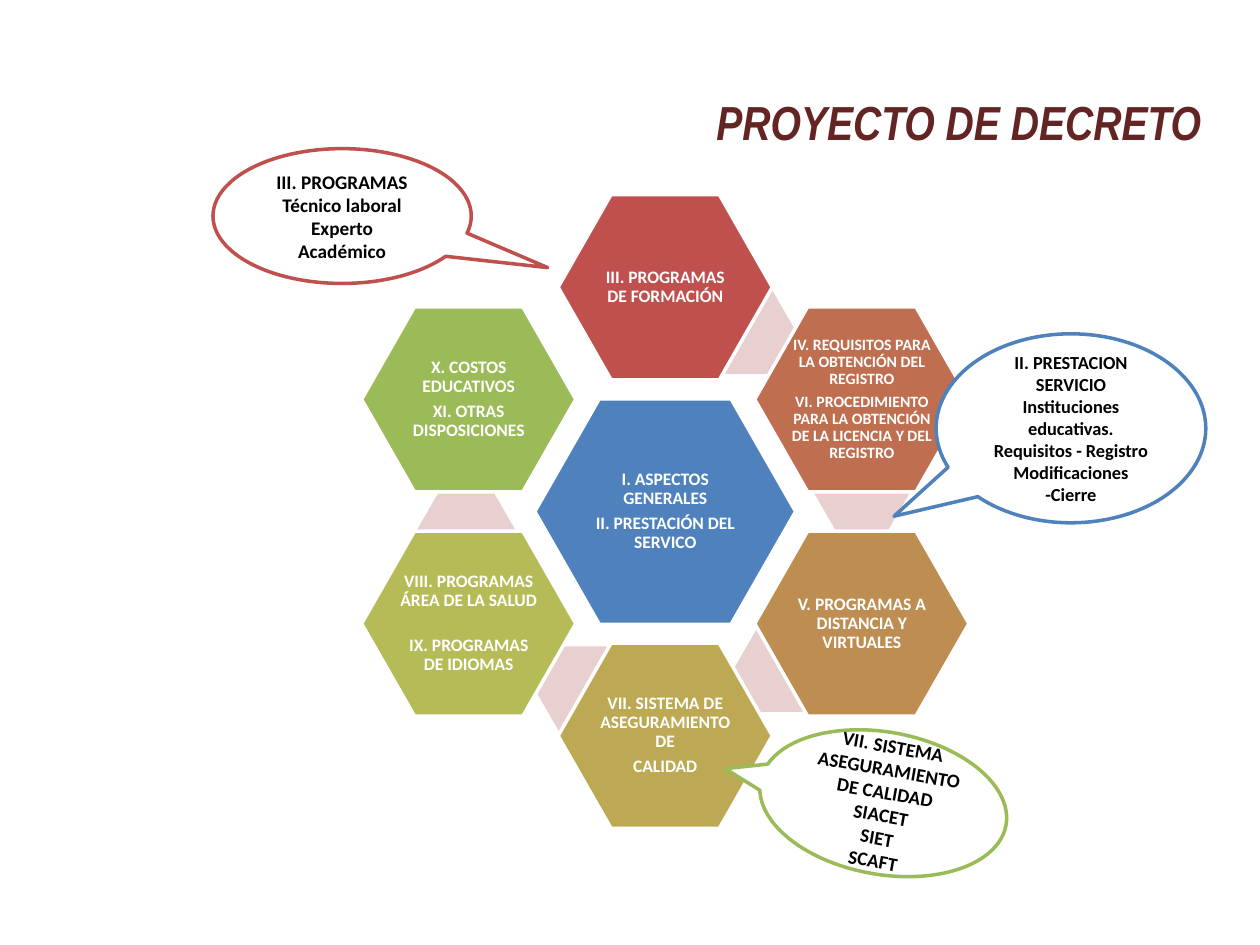
from dataclasses import dataclass

from pptx import Presentation
from pptx.dml.color import RGBColor
from pptx.enum.shapes import MSO_SHAPE
from pptx.enum.text import MSO_ANCHOR, PP_ALIGN
from pptx.util import Inches, Pt


@dataclass(frozen=True)
class Theme:
    white: str = "FFFFFF"
    ink: str = "000000"
    title: str = "632523"
    link: str = "E8D0D0"
    blue: str = "4F81BD"
    red: str = "C0504D"
    rust: str = "BF6F4F"
    ochre: str = "BE8D52"
    gold: str = "BDA954"
    olive: str = "B5BC57"
    green: str = "9BBB59"
    body_font: str = "Calibri"
    title_font: str = "Arial Narrow"
    title_size: float = 27.3
    chapter_size: float = 10
    dense_size: float = 9
    callout_size: float = 11
    small_callout_size: float = 10.5
    outline: float = 2


THEME = Theme()
CENTER = (5.28, 4.06)
COLUMN_STEP, ROW_STEP = 1.56, 0.89
CORE_SIZE, CHAPTER_SIZE, LINK_SIZE = (2.07, 1.79), (1.7, 1.47), (0.78, 0.67)

CORE = ["I. ASPECTOS GENERALES", "II. PRESTACIÓN DEL SERVICO"]

# column, row, fill, text size, gap before later paragraphs, paragraphs
CHAPTERS = [
    (0, -2, THEME.red, THEME.chapter_size, 0, ["III. PROGRAMAS DE FORMACIÓN"]),
    (1, -1, THEME.rust, THEME.dense_size, 0,
     ["IV. REQUISITOS PARA LA OBTENCIÓN DEL REGISTRO",
      "VI. PROCEDIMIENTO PARA LA OBTENCIÓN DE LA LICENCIA Y DEL REGISTRO"]),
    (1, 1, THEME.ochre, THEME.chapter_size, 0,
     ["V. PROGRAMAS A DISTANCIA Y VIRTUALES"]),
    (0, 2, THEME.gold, THEME.chapter_size, 0,
     ["VII. SISTEMA DE ASEGURAMIENTO DE", "CALIDAD"]),
    (-1, 1, THEME.olive, THEME.chapter_size, 11.5,
     ["VIII. PROGRAMAS ÁREA DE LA SALUD", "IX. PROGRAMAS DE IDIOMAS"]),
    (-1, -1, THEME.green, THEME.chapter_size, 0,
     ["X. COSTOS EDUCATIVOS", "XI. OTRAS DISPOSICIONES"]),
]

LINKS = [(5.54, 2.3), (6.45, 3.56), (5.82, 4.98), (4.24, 5.13), (3.31, 3.87)]

# box, tail tip, rotation, outline, text size, paragraphs
CALLOUTS = [
    ((1.69, 1.18, 2.05, 1.07), (0.796, 0.383), 0, THEME.red, THEME.callout_size,
     ["III. PROGRAMAS", "Técnico laboral Experto", "Académico"]),
    ((6.02, 5.81, 1.98, 1.13), (-0.648, -0.044), 10.1, THEME.green,
     THEME.callout_size,
     ["VII. SISTEMA ASEGURAMIENTO DE CALIDAD", "SIACET", "SIET", "SCAFT"]),
    ((7.43, 2.65, 2.14, 1.5), (-0.656, 0.465), 0, THEME.blue,
     THEME.small_callout_size,
     ["II. PRESTACION SERVICIO Instituciones educativas.",
      "Requisitos - Registro", "Modificaciones -Cierre"]),
]


def apply(target, values):
    for name, value in values.items():
        setattr(target, name, value)


def write(frame, paragraphs, color, font, spacing=None, gap=0):
    """Fill a text frame with centred paragraphs; gap goes before all but the first."""
    frame.vertical_anchor = MSO_ANCHOR.MIDDLE
    for index, text in enumerate(paragraphs):
        paragraph = frame.add_paragraph() if index else frame.paragraphs[0]
        apply(paragraph, {"alignment": PP_ALIGN.CENTER, **(spacing or {})})
        if index and gap:
            paragraph.space_before = Pt(gap)
        run = paragraph.add_run()
        run.text = text
        apply(run.font, {"bold": True, **font})
        run.font.color.rgb = RGBColor.from_string(color)


def add_figure(slide, kind, box, fill, outline=None):
    figure = slide.shapes.add_shape(kind, *map(Inches, box))
    figure.shadow.inherit = False
    figure.fill.solid()
    figure.fill.fore_color.rgb = RGBColor.from_string(fill)
    if outline:
        figure.line.color.rgb = RGBColor.from_string(outline)
        figure.line.width = Pt(THEME.outline)
    else:
        figure.line.fill.background()
    return figure


def add_title(slide, text):
    title = slide.shapes.title
    apply(title, {"left": Inches(5.51), "top": Inches(0.68),
                  "width": Inches(4.2), "height": Inches(0.57)})
    title.text_frame.word_wrap = False
    write(title.text_frame, [text], THEME.title,
          {"name": THEME.title_font, "size": Pt(THEME.title_size), "italic": True})


def add_chapter(slide, column, row, size, fill, text_size, gap, paragraphs):
    """Place a labelled hexagon by its steps from the centre of the ring."""
    width, height = size
    box = (CENTER[0] + column * COLUMN_STEP - width / 2,
           CENTER[1] + row * ROW_STEP - height / 2, width, height)
    hexagon = add_figure(slide, MSO_SHAPE.HEXAGON, box, fill, THEME.white)
    hexagon.adjustments[0] = 0.286
    frame = hexagon.text_frame
    sides = ("left", "top", "right", "bottom")
    apply(frame, {"word_wrap": True,
                  **{f"margin_{side}": Inches(0.01) for side in sides}})
    write(frame, paragraphs, THEME.white,
          {"name": THEME.body_font, "size": Pt(text_size)},
          {"line_spacing": 0.9, "space_after": Pt(3.5)}, gap)


def add_link(slide, corner):
    link = add_figure(slide, MSO_SHAPE.HEXAGON, (*corner, *LINK_SIZE), THEME.link)
    link.adjustments[0] = 0.289


def add_callout(slide, box, tip, rotation, outline, text_size, paragraphs):
    callout = add_figure(slide, MSO_SHAPE.OVAL_CALLOUT, box, THEME.white, outline)
    callout.rotation = rotation
    for index, offset in enumerate(tip):
        callout.adjustments[index] = offset
    callout.text_frame.word_wrap = True
    write(callout.text_frame, paragraphs, THEME.ink,
          {"name": THEME.body_font, "size": Pt(text_size)})


def main():
    deck = Presentation()
    apply(deck, {"slide_width": Inches(10), "slide_height": Inches(7.5)})
    slide = deck.slides.add_slide(deck.slide_layouts[5])
    add_title(slide, "PROYECTO DE DECRETO")
    for corner in LINKS:
        add_link(slide, corner)
    add_chapter(slide, 0, 0, CORE_SIZE, THEME.blue, THEME.chapter_size, 0, CORE)
    for column, row, *content in CHAPTERS:
        add_chapter(slide, column, row, CHAPTER_SIZE, *content)
    for callout in CALLOUTS:
        add_callout(slide, *callout)
    deck.save("out.pptx")


if __name__ == "__main__":
    main()
